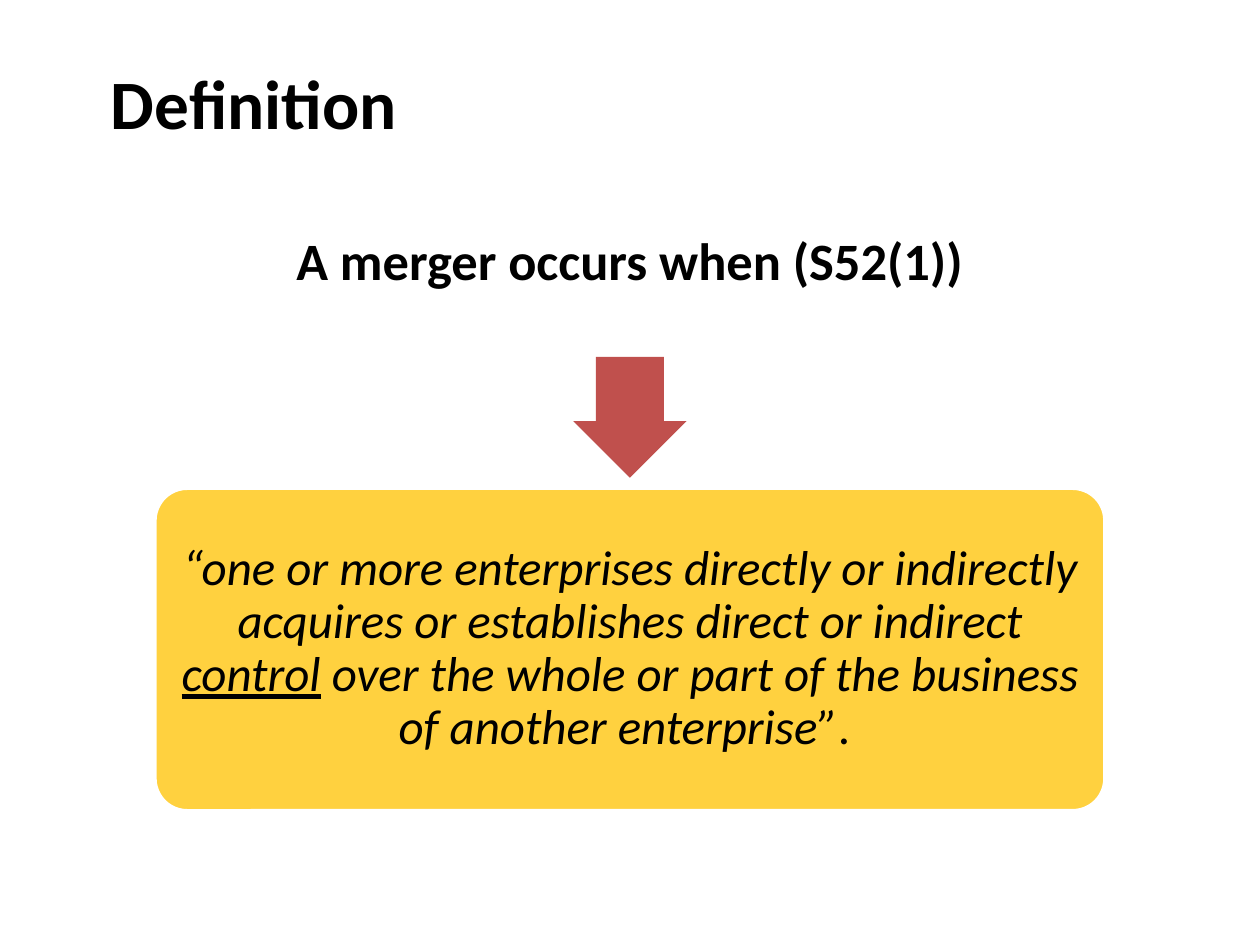
from pptx import Presentation
from pptx.dml.color import RGBColor
from pptx.enum.shapes import MSO_SHAPE
from pptx.enum.text import MSO_ANCHOR, PP_ALIGN
from pptx.util import Pt

TITLE = "Definition"
# Each run: text, italic, underlined
LEAD = [("A merger occurs when (S52(1))", False, False)]
QUOTE = [
    ("“one or more enterprises directly or indirectly acquires or "
     "establishes direct or indirect ", True, False),
    ("control", True, True),
    (" over the whole or part of the business of another enterprise”",
     True, False),
    (". ", False, False),
]
COLORS = {"text": "000000", "line": "FFFFFF",
          "arrow": "C0504D", "quote": "FFD13F"}
FONT = "Calibri"
WIDTH, HEIGHT = 720, 540


def color(name):
    return RGBColor.from_string(COLORS[name])


def style(font, size, bold=False):
    font.name, font.size, font.bold = FONT, Pt(size), bold
    font.color.rgb = color("text")


def add_centred(slide, kind, top, width, height, adjusts, fill=None):
    """Add a preset shape centred across the slide."""
    left = (WIDTH - width) / 2
    shape = slide.shapes.add_shape(
        kind, Pt(left), Pt(top), Pt(width), Pt(height))
    shape.shadow.inherit = False
    for i, value in enumerate(adjusts):
        shape.adjustments[i] = value
    if fill:
        shape.fill.solid()
        shape.fill.fore_color.rgb = color(fill)
    else:
        shape.fill.background()
    return shape


def add_box(slide, top, width, height, runs, size, bold=False, fill=None):
    box = add_centred(slide, MSO_SHAPE.ROUNDED_RECTANGLE,
                      top, width, height, [0.1], fill)
    box.line.color.rgb = color("line")
    box.line.width = Pt(2)
    frame = box.text_frame
    frame.word_wrap = True
    frame.vertical_anchor = MSO_ANCHOR.MIDDLE
    frame.margin_left = frame.margin_right = Pt(8.64)
    frame.margin_top = frame.margin_bottom = Pt(8.64)
    para = frame.paragraphs[0]
    para.alignment = PP_ALIGN.CENTER
    para.line_spacing = 0.9
    style(para.font, size, bold)
    for text, italic, under in runs:
        run = para.add_run()
        run.text = text
        run.font.italic, run.font.underline = italic, under


def main():
    deck = Presentation()
    deck.slide_width, deck.slide_height = Pt(WIDTH), Pt(HEIGHT)
    slide = deck.slides.add_slide(deck.slide_layouts[5])

    title = slide.shapes.title
    title.left, title.top = Pt(56.2), Pt(33.8)
    title.width, title.height = Pt(612), Pt(49)
    title.text = TITLE
    title.text_frame.vertical_anchor = MSO_ANCHOR.MIDDLE
    para = title.text_frame.paragraphs[0]
    para.alignment = PP_ALIGN.LEFT
    style(para.font, 39.6, bold=True)

    add_box(slide, 78.5, 585.4, 144.7, LEAD, 30, bold=True)
    arrow = add_centred(slide, MSO_SHAPE.DOWN_ARROW,
                        203.9, 64.8, 69.1, [0.6, 0.5], "arrow")
    arrow.line.fill.background()
    add_box(slide, 279, 542.9, 184.3, QUOTE, 28, fill="quote")

    deck.save("out.pptx")


if __name__ == "__main__":
    main()
